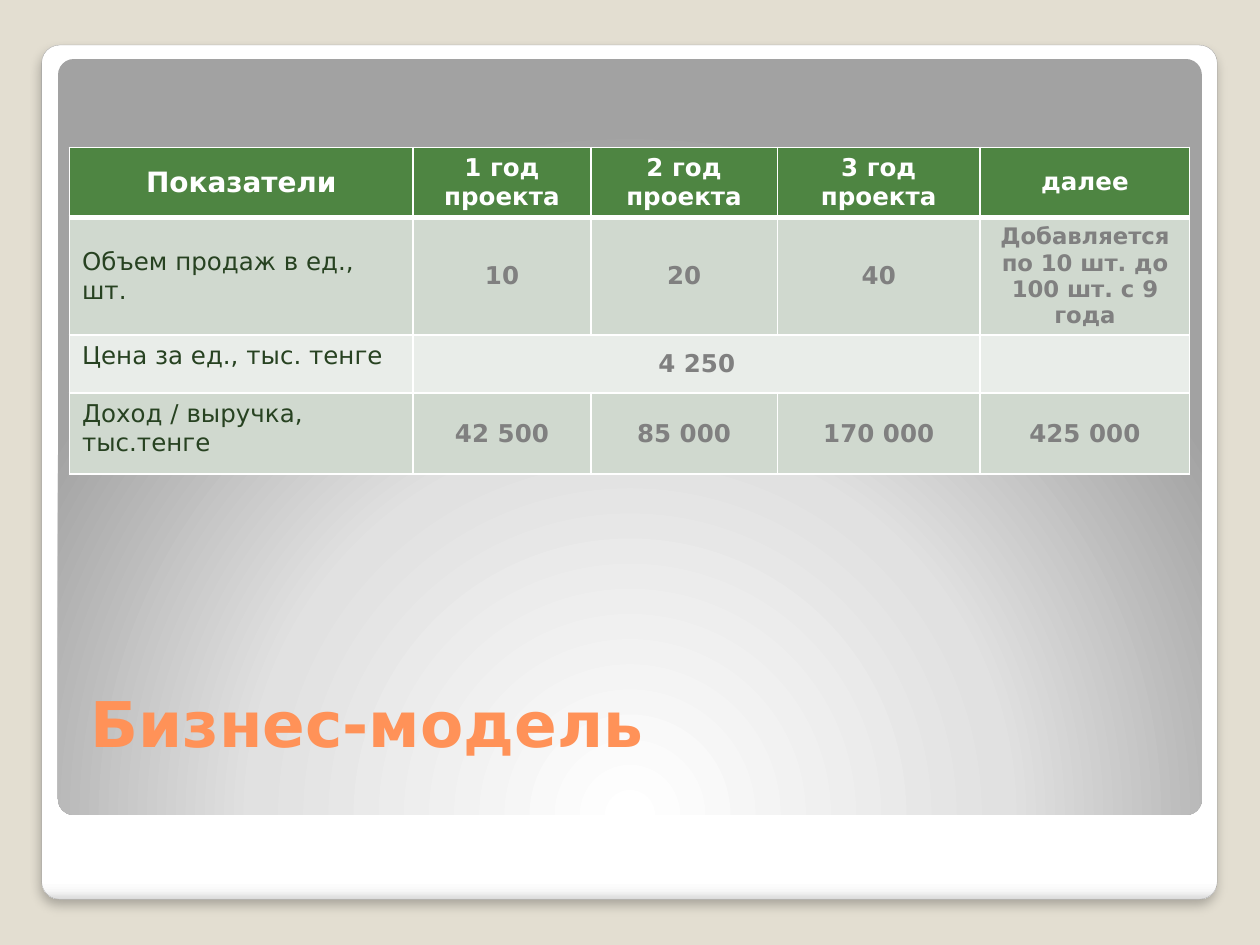
"""Build the business model slide: a framed panel with a sales table and a title."""
import pptx
import pptx.dml.color
import pptx.enum.shapes
import pptx.enum.text
import pptx.oxml
import pptx.oxml.ns
import pptx.util
from pptx.util import Cm, Pt

FONT = "DejaVu Sans"
NAMESPACE = pptx.oxml.ns.nsdecls("a")
MIDDLE = pptx.enum.text.MSO_ANCHOR.MIDDLE
TOP = pptx.enum.text.MSO_ANCHOR.TOP
LEFT = pptx.enum.text.PP_ALIGN.LEFT
CENTER = pptx.enum.text.PP_ALIGN.CENTER


def rgb(value):
    """Return the colour for a hex string."""
    return pptx.dml.color.RGBColor.from_string(value)


def add_frame(left, top, width, height, stops, direction):
    """Add a rounded frame with a gradient fill."""
    frame = slide.shapes.add_shape(
        pptx.enum.shapes.MSO_SHAPE.ROUNDED_RECTANGLE, Cm(left), Cm(top), Cm(width), Cm(height))
    frame.adjustments[0] = 0.021
    frame.shadow.inherit = False
    frame.line.fill.background()
    frame.fill.gradient()
    stop_xml = "".join(
        f'<a:gs pos="{position * 1000}"><a:srgbClr val="{color}"/></a:gs>'
        for position, color in stops)
    gradient = frame.element.spPr.find(pptx.oxml.ns.qn("a:gradFill"))
    frame.element.spPr.replace(gradient, pptx.oxml.parse_xml(
        f'<a:gradFill {NAMESPACE} rotWithShape="1"><a:gsLst>{stop_xml}</a:gsLst>{direction}</a:gradFill>'))
    return frame


presentation = pptx.Presentation()
presentation.slide_width = Cm(25.4)
presentation.slide_height = Cm(19.05)
slide = presentation.slides.add_slide(presentation.slide_layouts[5])
slide.background.fill.solid()
slide.background.fill.fore_color.rgb = rgb("E3DED1")

card = add_frame(
    0.84, 0.91, 23.7, 17.22,
    [(0, "FFFFFF"), (98, "FFFFFF"), (99, "F7F7F7"), (100, "DADADA")],
    '<a:lin ang="5400000" scaled="0"/>')
card.line.color.rgb = rgb("A4A4A4")
card.line.width = Pt(0.16)
card.element.spPr.find(pptx.oxml.ns.qn("a:effectLst")).append(pptx.oxml.parse_xml(
    f'<a:outerShdw {NAMESPACE} blurRad="{Pt(6)}" dist="{Pt(4)}" dir="5400000" rotWithShape="0">'
    '<a:srgbClr val="000000"><a:alpha val="25000"/></a:srgbClr></a:outerShdw>'))

panel = add_frame(
    1.17, 1.19, 23.06, 15.24,
    [(0, "FFFFFF"), (55, "E1E1E1"), (100, "A2A2A2")],
    '<a:path path="circle"><a:fillToRect l="50000" t="175000" r="50000" b="-75000"/></a:path>')

title = slide.shapes.title
panel.element.addnext(title.element)
title.left, title.top, title.width, title.height = Cm(1.57), Cm(13.11), Cm(20.65), Cm(2.34)
title.text_frame.text = "Бизнес-модель"
title.text_frame.vertical_anchor = pptx.enum.text.MSO_ANCHOR.BOTTOM
heading = title.text_frame.paragraphs[0]
heading.alignment = LEFT
heading.font.name = FONT
heading.font.size = Pt(36)
heading.font.bold = True
heading.font.color.rgb = rgb("FF9258")

indicators = [
    ["Показатели", "1 год проекта", "2 год проекта", "3 год проекта", "далее"],
    ["Объем продаж в ед., шт.", "10", "20", "40", "Добавляется по 10 шт. до 100 шт. с 9 года"],
    ["Цена за ед., тыс. тенге", "4 250", "", "", ""],
    ["Доход / выручка, тыс.тенге", "42 500", "85 000", "170 000", "425 000"],
]
column_widths = [6.93, 3.58, 3.76, 4.09, 4.22]
row_heights = [1.41, 2.37, 1.17, 1.63]
row_fills = ["4E8542", "D0D9CF", "E9EDE9", "D0D9CF"]
special_sizes = {(0, 0): 16, (1, 4): 13}

table = slide.shapes.add_table(
    len(row_heights), len(column_widths), Cm(1.4), Cm(2.97),
    Cm(sum(column_widths)), Cm(sum(row_heights))).table
for column, width in zip(table.columns, column_widths):
    column.width = Cm(width)
for row, height in zip(table.rows, row_heights):
    row.height = Cm(height)
table.cell(2, 1).merge(table.cell(2, 3))

for row_index, labels in enumerate(indicators):
    for column_index, label in enumerate(labels):
        cell = table.cell(row_index, column_index)
        is_header = row_index == 0
        is_label = column_index == 0 and not is_header
        cell.text = label
        cell.vertical_anchor = TOP if is_label and row_index > 1 else MIDDLE
        paragraph = cell.text_frame.paragraphs[0]
        paragraph.alignment = LEFT if is_label else CENTER
        paragraph.font.name = FONT
        paragraph.font.size = Pt(special_sizes.get((row_index, column_index), 14))
        paragraph.font.bold = not is_label
        paragraph.font.color.rgb = rgb("FFFFFF" if is_header else "274221" if is_label else "808080")
        properties = cell._tc.get_or_add_tcPr()
        for side in "LRTB":
            thick = (side == "B" and is_header) or (side == "T" and row_index == 1)
            properties.append(pptx.oxml.parse_xml(
                f'<a:ln{side} {NAMESPACE} w="{Pt(3 if thick else 1)}"><a:solidFill>'
                f'<a:srgbClr val="FFFFFF"/></a:solidFill></a:ln{side}>'))
        cell.fill.solid()
        cell.fill.fore_color.rgb = rgb(row_fills[row_index])

presentation.save("out.pptx")
